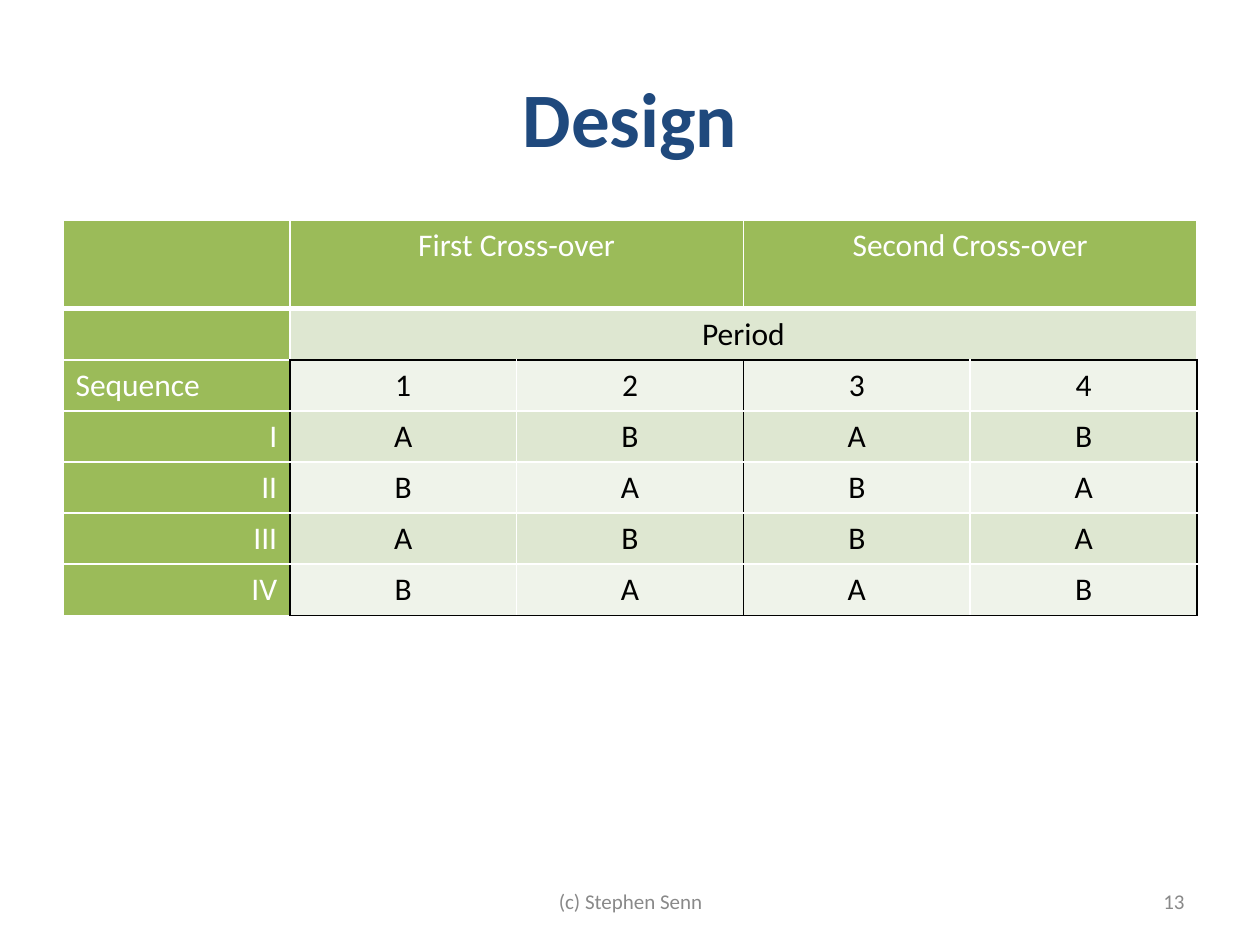
from lxml import etree
from pptx import Presentation
from pptx import util as u
from pptx.dml.color import RGBColor
from pptx.enum import text as t
from pptx.oxml.ns import qn

WHITE, BLACK, GREEN = "FFFFFF", "000000", "9BBB59"
BANDS = ("EFF3EA", "DEE7D1")
LEFT, MID, RIGHT = t.PP_ALIGN.LEFT, t.PP_ALIGN.CENTER, t.PP_ALIGN.RIGHT
ROWS = [
    ["", "First Cross-over", "", "Second Cross-over", ""],
    ["", "Period", "", "", ""],
    ["Sequence", "1", "2", "3", "4"],
    ["I", "A", "B", "A", "B"],
    ["II", "B", "A", "B", "A"],
    ["III", "A", "B", "B", "A"],
    ["IV", "B", "A", "A", "B"],
]


def color(code):
    return RGBColor.from_string(code)


def write(frame, words, size, code, align, bold=False):
    para = frame.paragraphs[0]
    para.alignment = align
    run = para.add_run()
    run.text = words
    font = run.font
    font.name, font.size, font.bold = "Calibri", u.Pt(size), bold
    font.color.rgb = color(code)


def place(shape, left, top, width, height):
    shape.left, shape.top = u.Inches(left), u.Inches(top)
    shape.width, shape.height = u.Inches(width), u.Inches(height)


def title(slide, words):
    shape = slide.shapes.title
    place(shape, 0.5, 0.3, 9, 1.25)
    shape.text_frame.vertical_anchor = t.MSO_ANCHOR.MIDDLE
    write(shape.text_frame, words, 44, "1F497D", MID, True)


def label(slide, words, left, width, align):
    box = slide.shapes.add_textbox(0, 0, 0, 0)
    place(box, left, 6.95, width, 0.4)
    frame = box.text_frame
    frame.word_wrap = True
    frame.vertical_anchor = t.MSO_ANCHOR.MIDDLE
    write(frame, words, 12, "898989", align)


def edge(cell, lines):
    """Set (colour, points) borders in the order left, right, top, bottom."""
    props = cell._tc.get_or_add_tcPr()
    for i, (side, (code, width)) in enumerate(zip("LRTB", lines)):
        line = etree.Element(qn(f"a:ln{side}"), w=str(u.Pt(width)))
        fill = etree.SubElement(line, qn("a:solidFill"))
        etree.SubElement(fill, qn("a:srgbClr"), val=code)
        props.insert(i, line)


def borders(row, col):
    """Black frames each cross-over's block of periods; the rest is white."""
    block = row > 1
    inner = col > 0
    black = (
        block and col in (1, 3),
        block and col in (0, 2, 4),
        inner and row == 2,
        inner and row in (1, 6),
    )
    lines = [(BLACK if dark else WHITE, 1) for dark in black]
    if row == 0:
        lines[3] = (WHITE, 3)
    return lines


def grid(slide):
    frame = slide.shapes.add_table(
        len(ROWS), 5, u.Inches(0.5), u.Inches(1.75), u.Inches(9), u.Inches(3.13))
    table = frame.table
    table.first_row = table.horz_banding = False
    for i, row in enumerate(table.rows):
        row.height = u.Inches(2.43 / 6 if i else 0.7)

    for i, line in enumerate(ROWS):
        for j, words in enumerate(line):
            cell = table.cell(i, j)
            head = i == 0 or j == 0
            cell.fill.solid()
            cell.fill.fore_color.rgb = color(GREEN if head else BANDS[i % 2])
            edge(cell, borders(i, j))
            if words:
                align = MID if j else (LEFT if i == 2 else RIGHT)
                write(cell.text_frame, words, 18, WHITE if head else BLACK, align)
                # Sequence numerals sit two levels in
                if j == 0 and i > 2:
                    para = cell.text_frame.paragraphs[0]
                    para.level = 2
                    para._p.get_or_add_pPr().set("marL", str(u.Inches(1)))

    # Spanning headings
    for row, first, last in ((0, 1, 2), (0, 3, 4), (1, 1, 4)):
        table.cell(row, first).merge(table.cell(row, last))


def main():
    deck = Presentation()
    deck.slide_width, deck.slide_height = u.Inches(10), u.Inches(7.5)
    slide = deck.slides.add_slide(deck.slide_layouts[5])
    title(slide, "Design")
    grid(slide)
    # Footer and page number
    label(slide, "(c) Stephen Senn", 3.42, 3.17, MID)
    label(slide, "13", 7.17, 2.33, RIGHT)
    deck.save("out.pptx")


if __name__ == "__main__":
    main()
